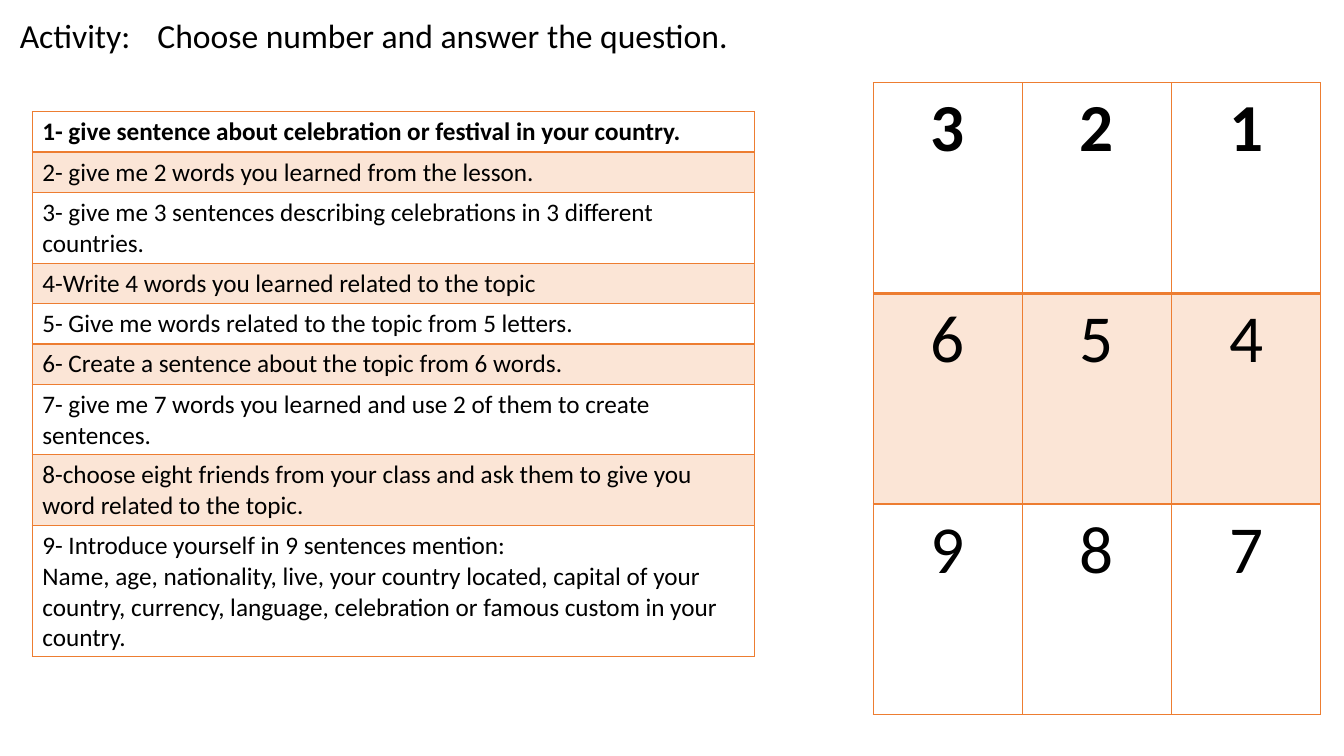
import dataclasses

import lxml.etree
import pptx
import pptx.dml.color
import pptx.enum.text
import pptx.oxml.ns
import pptx.shapes.base
import pptx.slide
import pptx.table
import pptx.util

Inches = pptx.util.Inches
ALIGN = pptx.enum.text.PP_ALIGN
COLORS = {"text": "000000", "accent": "ED7D31", "band": "FBE5D6"}
FONT = "Calibri"


@dataclasses.dataclass
class Heading:
    text: str
    left: float
    width: float


@dataclasses.dataclass
class Grid:
    left: float
    top: float
    col_width: float
    row_height: float
    size: int
    align: ALIGN
    rows: list[list[str]]


ACTIVITY = Heading("Activity:", 0.09, 1.31)
INSTRUCTION = Heading("Choose number and answer the question.", 1.43, 5.92)

NUMBERS = Grid(8.66, 0.82, 1.48, 2.09, 48, ALIGN.CENTER,
               [[str(last - i) for i in range(3)] for last in (3, 6, 9)])
QUESTIONS = Grid(0.32, 1.11, 7.16, 0.4, 18, ALIGN.LEFT, [[question] for question in (
    "1- give sentence about celebration or festival in your country.",
    "2- give me 2 words you learned from the lesson.",
    "3- give me 3 sentences describing celebrations in 3 different countries.",
    "4-Write 4 words you learned related to the topic",
    "5- Give me words related to the topic from 5 letters.",
    "6- Create a sentence about the topic from 6 words.",
    "7- give me 7 words you learned and use 2 of them to create sentences.",
    "8-choose eight friends from your class and ask them to give you word related to the topic.",
    "9- Introduce yourself in 9 sentences mention:\n"
    "Name, age, nationality, live, your country located, capital of your country, "
    "currency, language, celebration or famous custom in your country.",
)])


def rgb(name: str) -> pptx.dml.color.RGBColor:
    return pptx.dml.color.RGBColor.from_string(COLORS[name])


def write(tf: pptx.text.text.TextFrame, text: str, size: int, align: ALIGN,
          bold: bool = False) -> None:
    tf.text = text
    font_values = {"name": FONT, "size": pptx.util.Pt(size), "bold": bold}
    for p in tf.paragraphs:
        p.alignment = align
        for r in p.runs:
            for name, value in font_values.items():
                setattr(r.font, name, value)
            r.font.color.rgb = rgb("text")


def format_heading(sp: pptx.shapes.base.BaseShape, heading: Heading) -> None:
    place = {"left": heading.left, "top": 0.1, "width": heading.width, "height": 0.5}
    for name, value in place.items():
        setattr(sp, name, Inches(value))
    frame_values = {"word_wrap": False,
                    "auto_size": pptx.enum.text.MSO_AUTO_SIZE.SHAPE_TO_FIT_TEXT,
                    "vertical_anchor": pptx.enum.text.MSO_ANCHOR.TOP}
    for name, value in frame_values.items():
        setattr(sp.text_frame, name, value)
    write(sp.text_frame, heading.text, 24, ALIGN.CENTER)


def set_borders(cell: pptx.table._Cell, row: int) -> None:
    """Draw all four sides, with a thicker rule under the first row."""
    qn = pptx.oxml.ns.qn
    widths = {"L": 1, "R": 1, "T": 2 if row == 1 else 1, "B": 2 if row == 0 else 1}
    tc_pr = cell._tc.get_or_add_tcPr()
    for side, width in widths.items():
        ln = lxml.etree.SubElement(tc_pr, qn(f"a:ln{side}"), w=str(pptx.util.Pt(width)))
        fill = lxml.etree.SubElement(ln, qn("a:solidFill"))
        lxml.etree.SubElement(fill, qn("a:srgbClr"), val=COLORS["accent"])


def add_grid(slide: pptx.slide.Slide, grid: Grid) -> None:
    n_rows, n_cols = len(grid.rows), len(grid.rows[0])
    table = slide.shapes.add_table(
        n_rows, n_cols, Inches(grid.left), Inches(grid.top),
        Inches(grid.col_width * n_cols), Inches(grid.row_height * n_rows)).table
    table.horz_banding = False
    for col in table.columns:
        col.width = Inches(grid.col_width)
    for i, texts in enumerate(grid.rows):
        table.rows[i].height = Inches(grid.row_height)
        for j, text in enumerate(texts):
            cell = table.cell(i, j)
            write(cell.text_frame, text, grid.size, grid.align, bold=i == 0)
            set_borders(cell, i)
            if i % 2:
                cell.fill.solid()
                cell.fill.fore_color.rgb = rgb("band")
            else:
                cell.fill.background()


def main() -> None:
    prs = pptx.Presentation()
    prs.slide_width, prs.slide_height = Inches(13.33), Inches(7.5)
    slide = prs.slides.add_slide(prs.slide_layouts.get_by_name("Title Only"))
    format_heading(slide.shapes.add_textbox(0, 0, 0, 0), ACTIVITY)
    format_heading(slide.shapes.title, INSTRUCTION)
    for grid in (NUMBERS, QUESTIONS):
        add_grid(slide, grid)
    prs.save("out.pptx")


if __name__ == "__main__":
    main()
